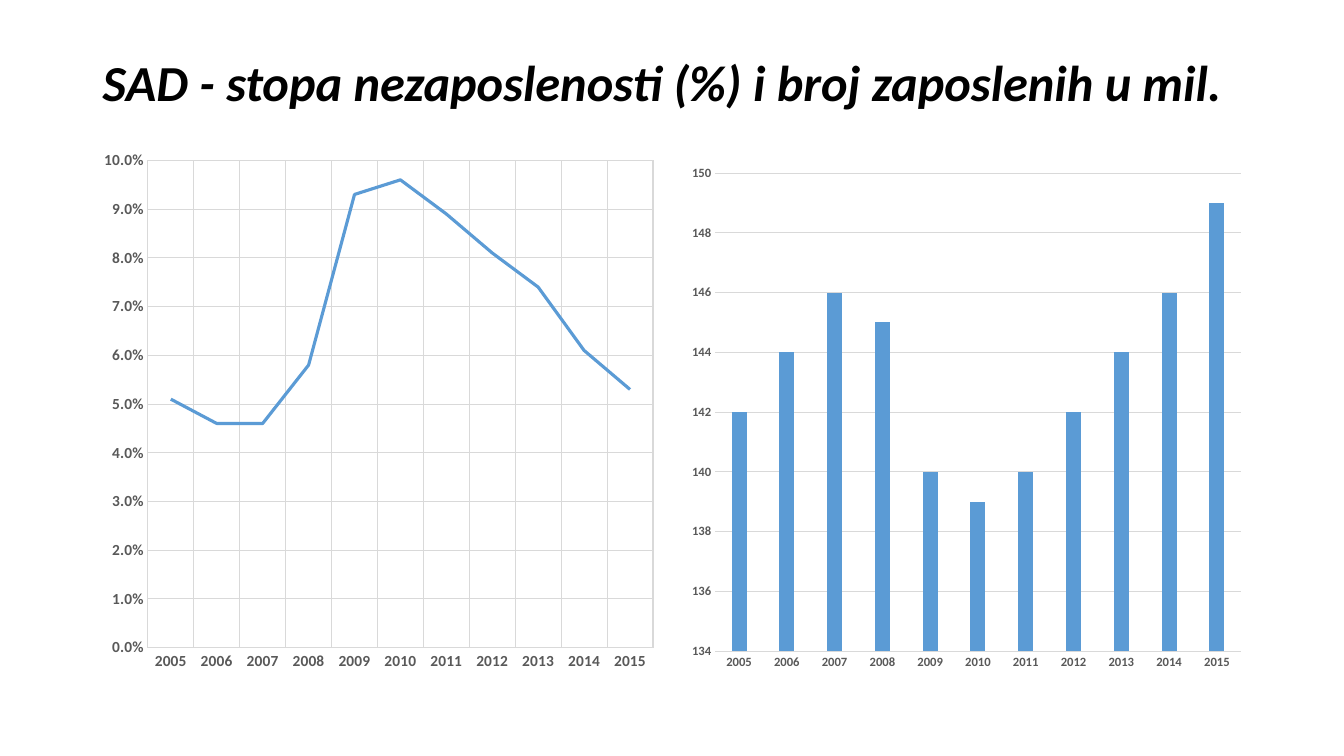
"""Builds a slide on unemployment and employment in the USA, 2005-2015."""
from pptx import Presentation
from pptx.chart.data import CategoryChartData
from pptx.dml.color import RGBColor
from pptx.enum.chart import XL_CHART_TYPE, XL_TICK_MARK
from pptx.enum.text import MSO_ANCHOR
from pptx.util import Inches, Pt

LINE = XL_CHART_TYPE.LINE
COLUMN = XL_CHART_TYPE.COLUMN_CLUSTERED
NO_TICK = XL_TICK_MARK.NONE
MIDDLE = MSO_ANCHOR.MIDDLE

FONT = "Calibri"
COLORS = {"title": "000000", "label": "595959", "grid": "D9D9D9", "series": "5B9BD5"}
YEARS = [str(year) for year in range(2005, 2016)]
UNEMPLOYMENT = [0.051, 0.046, 0.046, 0.058, 0.093, 0.096, 0.089, 0.081, 0.074, 0.061, 0.053]
EMPLOYED = [142, 144, 146, 145, 140, 139, 140, 142, 144, 146, 149]


def color(name):
    return RGBColor.from_string(COLORS[name])


def style_font(font, size, color_name, bold=True, italic=False):
    font.name = FONT
    font.size = Pt(size)
    font.bold = bold
    font.italic = italic
    font.color.rgb = color(color_name)


def style_line(line, color_name, width):
    line.color.rgb = color(color_name)
    line.width = Pt(width)


def style_axis(axis, size, grid):
    axis.major_tick_mark = NO_TICK
    axis.minor_tick_mark = NO_TICK
    style_font(axis.tick_labels.font, size, "label")
    axis.has_major_gridlines = grid
    if grid:
        style_line(axis.major_gridlines.format.line, "grid", 0.75)


def add_title(slide, text, box):
    title = slide.shapes.add_textbox(*map(Inches, box)).text_frame
    title.word_wrap = True
    title.vertical_anchor = MIDDLE
    title.text = text
    paragraph = title.paragraphs[0]
    paragraph.line_spacing = 0.9
    style_font(paragraph.runs[0].font, 36, "title", italic=True)


def add_year_chart(slide, kind, box, values, scale, number_format, label_size, year_grid=False):
    data = CategoryChartData(number_format=number_format)
    data.categories = YEARS
    data.add_series("Series 1", values)
    chart = slide.shapes.add_chart(kind, *map(Inches, box), data).chart
    chart.has_legend = False
    chart.has_title = False
    style_font(chart.font, 10, "title", bold=False)

    years, amounts = chart.category_axis, chart.value_axis
    style_axis(years, label_size, year_grid)
    style_line(years.format.line, "grid", 0.75)
    style_axis(amounts, label_size, True)
    amounts.format.line.fill.background()
    amounts.minimum_scale, amounts.maximum_scale, amounts.major_unit = scale
    amounts.tick_labels.number_format = number_format
    amounts.tick_labels.number_format_is_linked = False

    plot = chart.plots[0]
    plot.vary_by_categories = False
    return plot


def add_unemployment_chart(slide):
    plot = add_year_chart(slide, LINE, (0.92, 1.39, 5.67, 5.37), UNEMPLOYMENT,
                          (0, 0.1, 0.01), "0.0%", 11, year_grid=True)
    rate = plot.series[0]
    rate.smooth = False
    style_line(rate.format.line, "series", 2.25)


def add_employment_chart(slide):
    plot = add_year_chart(slide, COLUMN, (6.75, 1.54, 5.67, 5.21), EMPLOYED,
                          (134, 150, 2), "0", 9)
    plot.gap_width = 219
    plot.overlap = -27
    employed = plot.series[0]
    employed.format.fill.solid()
    employed.format.fill.fore_color.rgb = color("series")


def main():
    deck = Presentation()
    deck.slide_width, deck.slide_height = Inches(13.33), Inches(7.5)
    slide = deck.slides.add_slide(deck.slide_layouts[6])
    add_title(slide, "SAD - stopa nezaposlenosti (%) i broj zaposlenih u mil.",
              (0.92, 0.4, 11.5, 0.89))
    add_unemployment_chart(slide)
    add_employment_chart(slide)
    deck.save("out.pptx")


if __name__ == "__main__":
    main()
